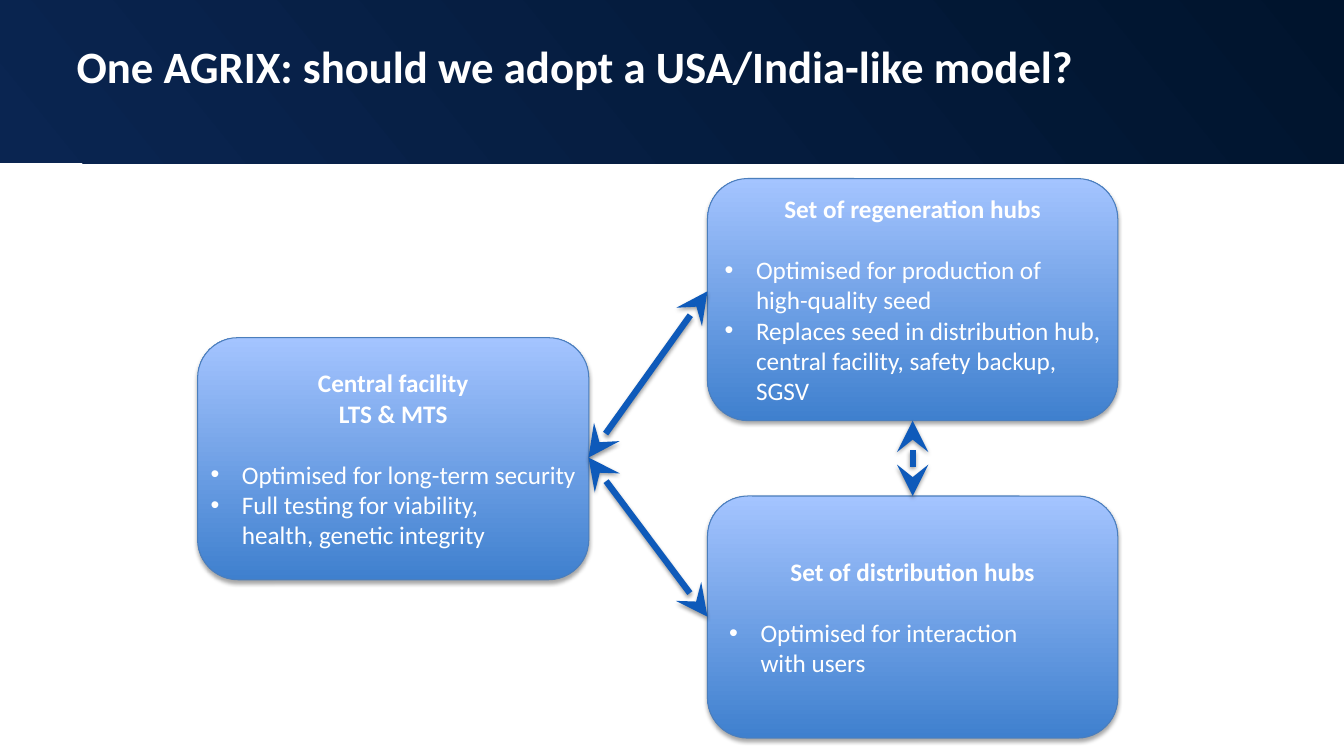
"""Build a slide of three linked facilities in a seed conservation model."""
from dataclasses import dataclass

from lxml.etree import SubElement
from pptx import Presentation
from pptx.dml.color import RGBColor
from pptx.enum.shapes import MSO_CONNECTOR, MSO_SHAPE
from pptx.enum.text import MSO_ANCHOR, PP_ALIGN
from pptx.oxml.ns import qn
from pptx.util import Cm, Pt


@dataclass(frozen=True)
class Theme:
    font: str = "Calibri"
    title_size: int = 32
    body_size: int = 18
    text: str = "FFFFFF"
    header: tuple = ("0A2551", "00142D")
    box: tuple = ("3F80CE", "A4C4FF")
    outline: str = "4B7EBC"
    arrow: str = "0E5ABA"
    shadow: str = "000000"


THEME = Theme()


def rgb(code):
    return RGBColor.from_string(code)


def fill_gradient(s, colors, angle):
    s.fill.gradient()
    s.fill.gradient_angle = angle
    for stop, color in zip(s.fill.gradient_stops, colors):
        stop.color.rgb = rgb(color)


def add_shadow(s, distance, opacity):
    effects = SubElement(s.element.spPr, qn("a:effectLst"))
    shadow = SubElement(effects, qn("a:outerShdw"), blurRad=str(Pt(3.1)),
                        dist=str(Pt(distance)), dir="5400000", rotWithShape="0")
    color = SubElement(shadow, qn("a:srgbClr"), val=THEME.shadow)
    SubElement(color, qn("a:alpha"), val=str(opacity * 1000))


def write(p, text, size, bold, align=PP_ALIGN.LEFT):
    p.text = text
    p.alignment = align
    for r in p.runs:
        r.font.name = THEME.font
        r.font.size = Pt(size)
        r.font.bold = bold
        r.font.color.rgb = rgb(THEME.text)


def add_bullet(p):
    pPr = p._p.get_or_add_pPr()
    pPr.set("marL", str(Cm(0.79)))
    pPr.set("indent", str(-Cm(0.79)))
    SubElement(pPr, qn("a:buFont"), typeface="Arial")
    SubElement(pPr, qn("a:buChar"), char="•")


def add_header(slide, width, title):
    s = slide.shapes.add_shape(MSO_SHAPE.RECTANGLE, 0, 0, width, Cm(4.11))
    s.shadow.inherit = False
    fill_gradient(s, THEME.header, 39)
    s.line.fill.background()
    tf = slide.shapes.add_textbox(Cm(1.68), Cm(0.84), Cm(30.02), Cm(2.18)).text_frame
    tf.word_wrap = True
    write(tf.paragraphs[0], title, THEME.title_size, True)


def add_facility(slide, left, top, width, heading, bullets):
    s = slide.shapes.add_shape(MSO_SHAPE.ROUNDED_RECTANGLE,
                               Cm(left), Cm(top), Cm(width), Cm(6.1))
    fill_gradient(s, THEME.box, 90)
    s.line.color.rgb = rgb(THEME.outline)
    s.line.width = Pt(0.75)
    add_shadow(s, 1.8, 35)
    tf = s.text_frame
    tf.word_wrap = False
    tf.vertical_anchor = MSO_ANCHOR.MIDDLE
    p = tf.paragraphs[0]
    write(p, heading, THEME.body_size, True, PP_ALIGN.CENTER)
    p.space_after = Pt(22)
    for bullet in bullets:
        p = tf.add_paragraph()
        write(p, bullet, THEME.body_size, False)
        add_bullet(p)


def add_arrow(slide, start, end):
    s = slide.shapes.add_connector(MSO_CONNECTOR.STRAIGHT,
                                   *map(Cm, start), *map(Cm, end))
    s.line.color.rgb = rgb(THEME.arrow)
    s.line.width = Pt(4.5)
    ln = s.line._get_or_add_ln()
    for tag in ("a:headEnd", "a:tailEnd"):
        SubElement(ln, qn(tag), type="stealth", w="lg", len="lg")
    add_shadow(s, 1.6, 38)


def main():
    prs = Presentation()
    prs.slide_width, prs.slide_height = Cm(33.87), Cm(19.05)
    slide = prs.slides.add_slide(prs.slide_layouts[6])
    add_header(slide, prs.slide_width,
               "One AGRIX: should we adopt a USA/India-like model?")
    add_facility(slide, 4.98, 8.51, 9.86, "Central facility\vLTS & MTS", [
        "Optimised for long-term security",
        "Full testing for viability,\vhealth, genetic integrity"])
    add_facility(slide, 17.83, 4.5, 10.34, "Set of regeneration hubs", [
        "Optimised for production of\vhigh-quality seed",
        "Replaces seed in distribution hub,\vcentral facility, safety backup,\vSGSV"])
    add_facility(slide, 17.83, 12.5, 10.34, "Set of distribution hubs", [
        "Optimised for interaction\vwith users"])
    central = (14.83, 11.53)
    add_arrow(slide, (17.83, 7.34), central)
    add_arrow(slide, (17.83, 15.54), central)
    add_arrow(slide, (23, 10.6), (23, 12.5))
    prs.save("out.pptx")


if __name__ == "__main__":
    main()
